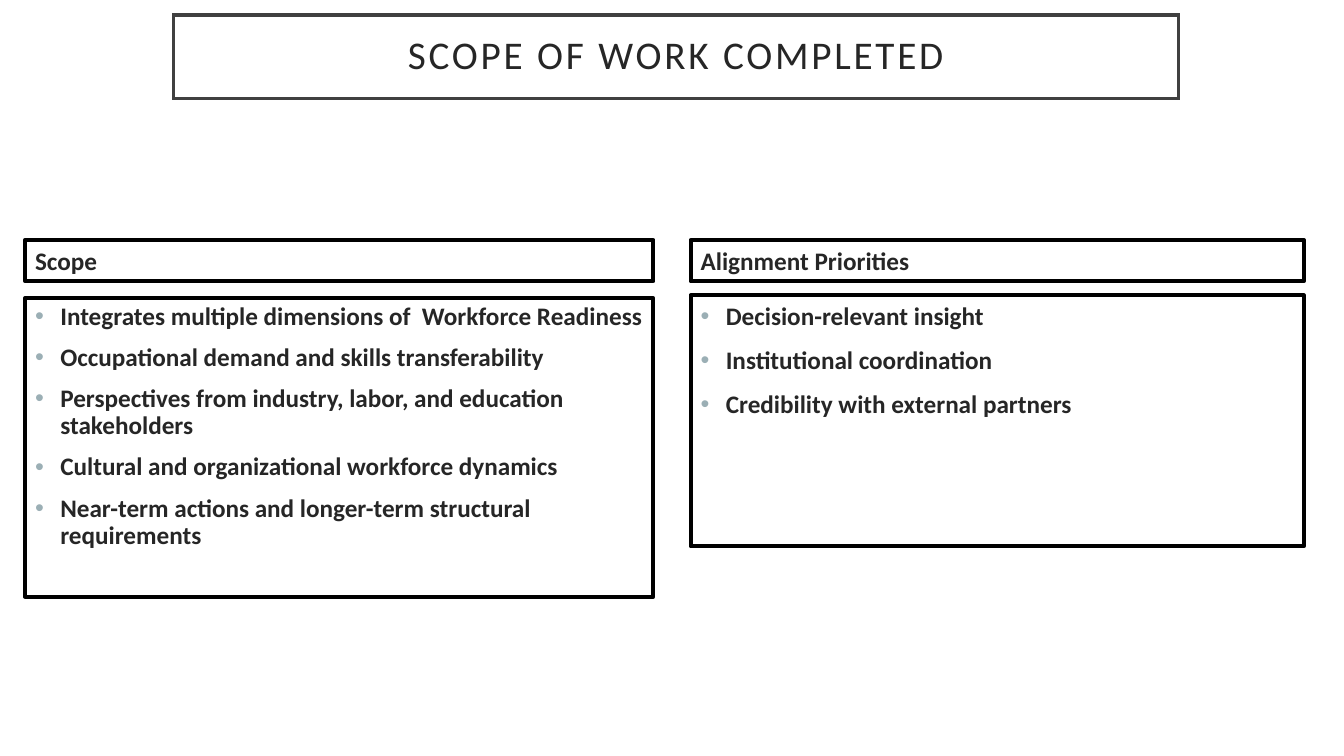
from dataclasses import dataclass

from lxml import etree
from pptx import Presentation
from pptx import util as u
from pptx.dml.color import RGBColor
from pptx.enum import shapes, text
from pptx.oxml.ns import qn

COLORS = {"white": "FFFFFF", "frame": "404040", "border": "000000",
          "text": "262626", "bullet": "9BAFB5"}
FONT = "Calibri"
HEAD_TOP, HEAD_HEIGHT = 2.38, 0.41


@dataclass
class Column:
    left: float
    width: float
    heading: str
    body_top: float
    body_height: float
    spacing: float
    items: list[str]


COLUMNS = [
    Column(0.25, 6.23, "Scope", 2.96, 2.96, 0.9, [
        "Integrates multiple dimensions of  Workforce Readiness",
        "Occupational demand and skills transferability",
        "Perspectives from industry, labor, and education stakeholders",
        "Cultural and organizational workforce dynamics",
        "Near-term actions and longer-term structural requirements",
    ]),
    Column(6.85, 6.08, "Alignment Priorities", 2.93, 2.49, 1.0, [
        "Decision-relevant insight",
        "Institutional coordination",
        "Credibility with external partners",
    ]),
]


def rgb(name: str) -> RGBColor:
    return RGBColor.from_string(COLORS[name])


def add_box(slide, left: float, top: float, width: float, height: float, *,
            line: str = "border", weight: float = 3, join: str = "a:round",
            fill: str | None = None):
    """Draw an outlined rectangle."""
    sp = slide.shapes.add_shape(
        shapes.MSO_SHAPE.RECTANGLE, u.Inches(left), u.Inches(top),
        u.Inches(width), u.Inches(height))
    sp.shadow.inherit = False
    if fill:
        sp.fill.solid()
        sp.fill.fore_color.rgb = rgb(fill)
    else:
        sp.fill.background()
    sp.line.color.rgb = rgb(line)
    sp.line.width = u.Pt(weight)
    etree.SubElement(sp.line.fill._xPr, qn(join))
    return sp


def add_bullet(p) -> None:
    """Give a paragraph a hanging coloured bullet."""
    pPr = p._p.get_or_add_pPr()
    indent = u.Inches(0.25)
    pPr.set("marL", str(indent))
    pPr.set("indent", str(-indent))
    color = etree.SubElement(pPr, qn("a:buClr"))
    etree.SubElement(color, qn("a:srgbClr"), val=COLORS["bullet"])
    etree.SubElement(pPr, qn("a:buFont"), typeface="Arial")
    etree.SubElement(pPr, qn("a:buChar"), char="•")


def write(sp, lines: list[str], *, size: float = 18, bold: bool = True,
          align=text.PP_ALIGN.LEFT, anchor=text.MSO_ANCHOR.TOP,
          spacing: float = 1.0, bullets: bool = False, tracking: float = 0) -> None:
    """Fill a shape with one paragraph per line."""
    tf = sp.text_frame
    tf.word_wrap = True
    tf.vertical_anchor = anchor
    for i, line in enumerate(lines):
        p = tf.add_paragraph() if i else tf.paragraphs[0]
        p.alignment = align
        p.line_spacing = spacing
        if i:
            p.space_before = u.Pt(10)
        if bullets:
            add_bullet(p)
        r = p.add_run()
        r.text = line
        r.font.name = FONT
        r.font.size = u.Pt(size)
        r.font.bold = bold
        r.font.color.rgb = rgb("text")
        if tracking:
            r._r.get_or_add_rPr().set("spc", str(int(tracking * 100)))


def add_column(slide, col: Column) -> None:
    """Draw a heading box with its bulleted list below."""
    head = add_box(slide, col.left, HEAD_TOP, col.width, HEAD_HEIGHT)
    write(head, [col.heading])
    body = add_box(slide, col.left, col.body_top, col.width, col.body_height)
    write(body, col.items, spacing=col.spacing, bullets=True)


def main() -> None:
    prs = Presentation()
    prs.slide_width, prs.slide_height = u.Inches(13.33), u.Inches(7.5)
    slide = prs.slides.add_slide(prs.slide_layouts[6])

    # Title
    title = add_box(slide, 1.72, 0.15, 9.97, 0.83, line="frame", weight=2.5,
                    join="a:miter", fill="white")
    write(title, ["SCOPE OF WORK COMPLETED"], size=28, bold=False,
          align=text.PP_ALIGN.CENTER, anchor=text.MSO_ANCHOR.MIDDLE,
          spacing=0.9, tracking=2)

    # Columns
    for col in COLUMNS:
        add_column(slide, col)

    prs.save("out.pptx")


if __name__ == "__main__":
    main()
